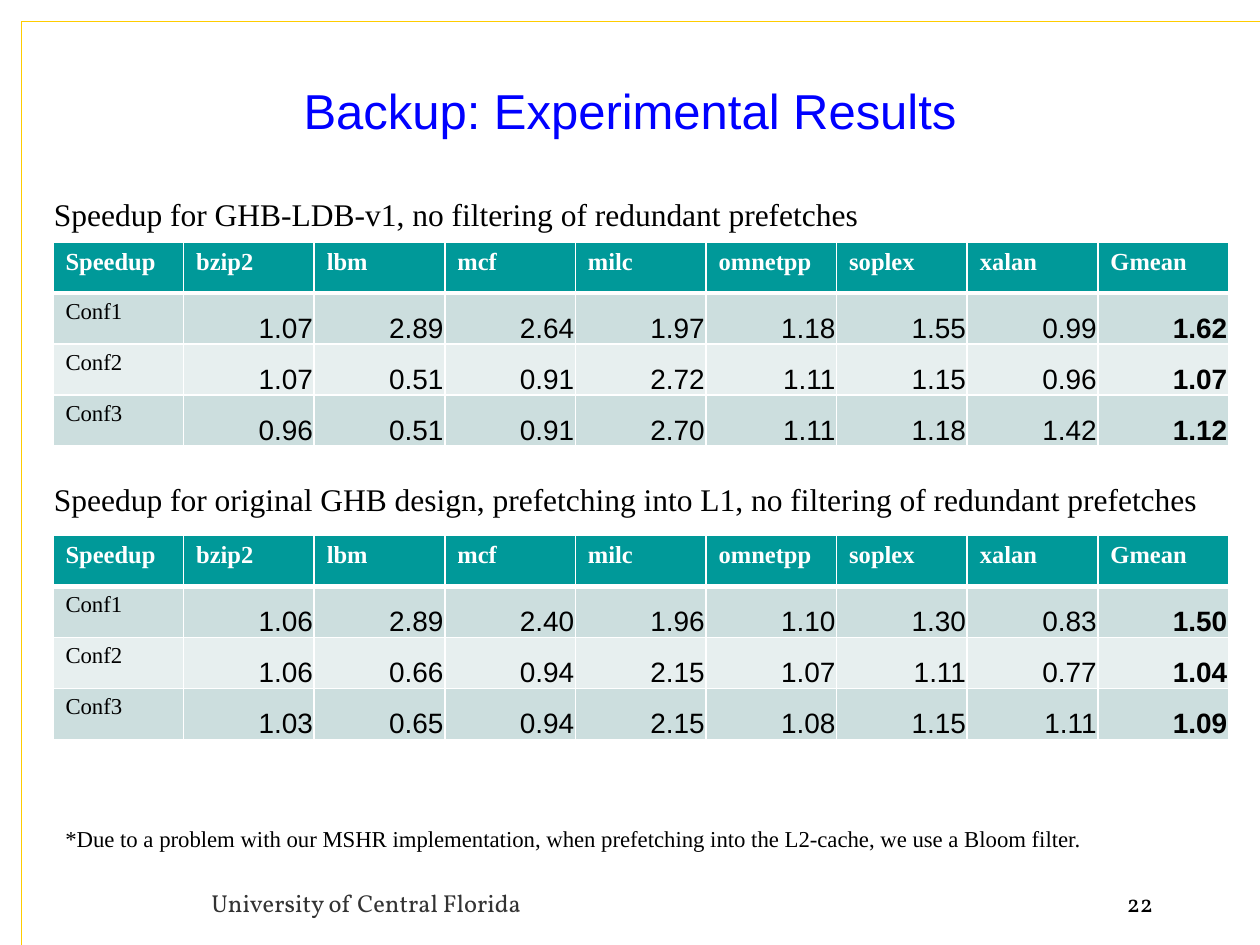
from lxml.etree import SubElement
from pptx import Presentation
from pptx.dml.color import RGBColor
from pptx.enum.shapes import MSO_CONNECTOR
from pptx.enum.text import MSO_ANCHOR, PP_ALIGN
from pptx.oxml.ns import qn
from pptx.util import Inches, Pt

BLUE = RGBColor(0x00, 0x00, 0xFF)
GOLD = RGBColor(0xFF, 0xCC, 0x00)
TEAL = RGBColor(0x00, 0x99, 0x99)
DARK = RGBColor(0xCC, 0xDE, 0xDE)
PALE = RGBColor(0xE7, 0xEF, 0xEF)
GRAY = RGBColor(0x33, 0x33, 0x33)
BLACK = RGBColor(0x00, 0x00, 0x00)
WHITE = RGBColor(0xFF, 0xFF, 0xFF)
SANS, SERIF, FOOT = "Arial", "Times New Roman", "Vollkorn"
LEFT, RIGHT = PP_ALIGN.LEFT, PP_ALIGN.RIGHT

TITLE = "Backup: Experimental Results"
HEAD = ["Speedup", "bzip2", "lbm", "mcf", "milc", "omnetpp", "soplex", "xalan", "Gmean"]
FIRST = [
    ["Conf1", "1.07", "2.89", "2.64", "1.97", "1.18", "1.55", "0.99", "1.62"],
    ["Conf2", "1.07", "0.51", "0.91", "2.72", "1.11", "1.15", "0.96", "1.07"],
    ["Conf3", "0.96", "0.51", "0.91", "2.70", "1.11", "1.18", "1.42", "1.12"],
]
SECOND = [
    ["Conf1", "1.06", "2.89", "2.40", "1.96", "1.10", "1.30", "0.83", "1.50"],
    ["Conf2", "1.06", "0.66", "0.94", "2.15", "1.07", "1.11", "0.77", "1.04"],
    ["Conf3", "1.03", "0.65", "0.94", "2.15", "1.08", "1.15", "1.11", "1.09"],
]
TABLES = [(1.92, FIRST), (4.25, SECOND)]
TEXTS = [
    ("University of Central Florida", (1.58, 7, 6.83, 0.33), 14, FOOT, GRAY, LEFT),
    ("22", (8.33, 7, 0.92, 0.33), 14, FOOT, BLACK, RIGHT),
    ("Speedup for GHB-LDB-v1, no filtering of redundant prefetches",
     (0.33, 1.5, 6.91, 0.4), 18, SERIF, BLACK, LEFT),
    ("Speedup for original GHB design, prefetching into L1, no filtering of redundant prefetches",
     (0.33, 3.76, 9.37, 0.4), 18, SERIF, BLACK, LEFT),
    ("*Due to a problem with our MSHR implementation, when prefetching into the L2-cache, "
     "we use a Bloom filter.", (0.42, 6.5, 8.35, 0.32), 13, SERIF, BLACK, LEFT),
]
LINES = [(0.17, 7.5, 0.75), (10, 0.17, 1)]


def style(para, size, face, color, align, bold=False):
    para.alignment = align
    font = para.font
    font.size, font.name, font.bold = Pt(size), face, bold
    font.color.rgb = color


def place(shape, box):
    shape.left, shape.top, shape.width, shape.height = map(Inches, box)


def edge(cell, row):
    widths = {"L": 1, "R": 1, "T": 3 if row == 1 else 1, "B": 3 if row == 0 else 1}
    props = cell._tc.get_or_add_tcPr()
    for side, width in widths.items():
        line = SubElement(props, qn("a:ln" + side), w=str(Pt(width)))
        fill = SubElement(line, qn("a:solidFill"))
        SubElement(fill, qn("a:srgbClr"), val=str(WHITE))


def add_grid(slide, top, rows):
    data = [HEAD] + rows
    frame = slide.shapes.add_table(len(data), len(HEAD), Inches(0.42), Inches(top),
                                   Inches(9.33), Inches(1.62))
    for r, row in enumerate(data):
        for c, text in enumerate(row):
            cell = frame.table.cell(r, c)
            edge(cell, r)
            cell.fill.solid()
            cell.fill.fore_color.rgb = TEAL if r == 0 else DARK if r % 2 else PALE
            cell.text = text
            para = cell.text_frame.paragraphs[0]
            if r == 0:
                style(para, 14, SERIF, WHITE, LEFT, True)
            elif c == 0:
                style(para, 13, SERIF, BLACK, LEFT)
            else:
                style(para, 16, SANS, BLACK, RIGHT, c == len(HEAD) - 1)
                cell.vertical_anchor = MSO_ANCHOR.BOTTOM
                cell.margin_left = cell.margin_right = cell.margin_top = Inches(0.01)
                cell.margin_bottom = 0


def main():
    deck = Presentation()
    deck.slide_width, deck.slide_height = Inches(10), Inches(7.5)
    slide = deck.slides.add_slide(deck.slide_layouts[5])
    for x, y, width in LINES:
        rule = slide.shapes.add_connector(MSO_CONNECTOR.STRAIGHT, Inches(0.17), Inches(0.17),
                                          Inches(x), Inches(y))
        rule.line.color.rgb = GOLD
        rule.line.width = Pt(width)
        SubElement(rule._element.spPr, qn("a:effectLst"))
    title = slide.shapes.title
    place(title, (0.25, 0.5, 9.5, 0.75))
    title.text = TITLE
    title.text_frame.vertical_anchor = MSO_ANCHOR.MIDDLE
    style(title.text_frame.paragraphs[0], 28, SANS, BLUE, PP_ALIGN.CENTER)
    for text, box, size, face, color, align in TEXTS:
        frame = slide.shapes.add_textbox(*map(Inches, box)).text_frame
        frame.word_wrap = True
        frame.text = text
        style(frame.paragraphs[0], size, face, color, align)
    for top, rows in TABLES:
        add_grid(slide, top, rows)
    deck.save("out.pptx")


if __name__ == "__main__":
    main()
